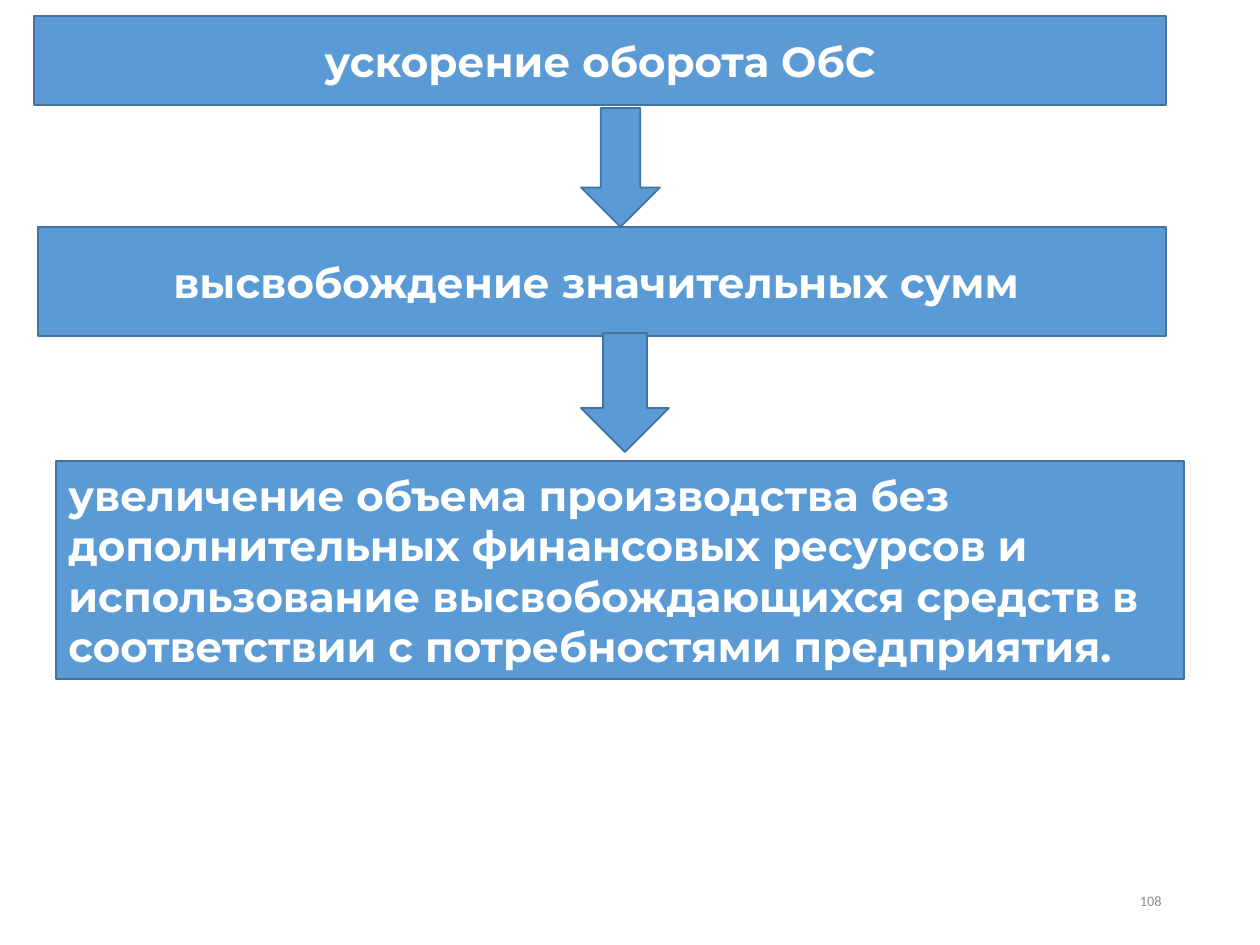
from dataclasses import dataclass

from pptx import Presentation
from pptx import util as u
from pptx.dml.color import RGBColor
from pptx.enum import shapes, text

EMU_PER_PX = 914400 / 126


@dataclass(frozen=True)
class Theme:
    fill: RGBColor = RGBColor(0x5B, 0x9B, 0xD5)
    outline: RGBColor = RGBColor(0x43, 0x73, 0x9E)
    white: RGBColor = RGBColor(0xFF, 0xFF, 0xFF)
    gray: RGBColor = RGBColor(0x8C, 0x8C, 0x8C)
    step_font: str = "Montserrat"
    number_font: str = "Calibri"
    step_size: float = 24
    number_size: float = 8.2
    outline_width: float = 1


@dataclass(frozen=True)
class Box:
    left: int
    top: int
    width: int
    height: int


@dataclass(frozen=True)
class Step:
    box: Box
    wording: str
    alignment: text.PP_ALIGN = text.PP_ALIGN.CENTER


THEME = Theme()
STEP_FORMAT = {"name": THEME.step_font, "size": u.Pt(THEME.step_size), "bold": True}
NUMBER_FORMAT = {"name": THEME.number_font, "size": u.Pt(THEME.number_size)}

STEPS = [
    Step(Box(34, 16, 1132, 89), "ускорение оборота ОбС"),
    Step(Box(38, 227, 1128, 109), "высвобождение значительных сумм "),
    Step(
        Box(56, 461, 1128, 218),
        "увеличение объема производства без дополнительных финансовых ресурсов "
        "и использование высвобождающихся средств в соответствии с "
        "потребностями предприятия.",
        text.PP_ALIGN.LEFT,
    ),
]
ARROWS = [Box(581, 108, 79, 119), Box(581, 333, 88, 119)]
NUMBER_BOX = Box(891, 876, 283, 50)


def px(length: int) -> u.Emu:
    return u.Emu(round(length * EMU_PER_PX))


def place(box: Box) -> tuple:
    return px(box.left), px(box.top), px(box.width), px(box.height)


def write(shape, wording: str, alignment, color: RGBColor, font_format: dict) -> None:
    frame = shape.text_frame
    frame.word_wrap = True
    frame.vertical_anchor = text.MSO_ANCHOR.MIDDLE
    paragraph = frame.paragraphs[0]
    paragraph.alignment = alignment
    run = paragraph.add_run()
    run.text = wording
    for name, value in font_format.items():
        setattr(run.font, name, value)
    run.font.color.rgb = color


def draw_shape(slide, kind: shapes.MSO_SHAPE, box: Box):
    shape = slide.shapes.add_shape(kind, *place(box))
    shape.shadow.inherit = False
    shape.fill.solid()
    shape.fill.fore_color.rgb = THEME.fill
    shape.line.color.rgb = THEME.outline
    shape.line.width = u.Pt(THEME.outline_width)
    return shape


def draw_step(slide, step: Step) -> None:
    shape = draw_shape(slide, shapes.MSO_SHAPE.RECTANGLE, step.box)
    write(shape, step.wording, step.alignment, THEME.white, STEP_FORMAT)


def main() -> None:
    presentation = Presentation()
    presentation.slide_width = u.Inches(10)
    presentation.slide_height = u.Inches(7.5)
    slide = presentation.slides.add_slide(presentation.slide_layouts[6])
    for step in STEPS:
        draw_step(slide, step)
    for arrow in ARROWS:
        draw_shape(slide, shapes.MSO_SHAPE.DOWN_ARROW, arrow)
    number = slide.shapes.add_textbox(*place(NUMBER_BOX))
    write(number, "108", text.PP_ALIGN.RIGHT, THEME.gray, NUMBER_FORMAT)
    presentation.save("out.pptx")


if __name__ == "__main__":
    main()
